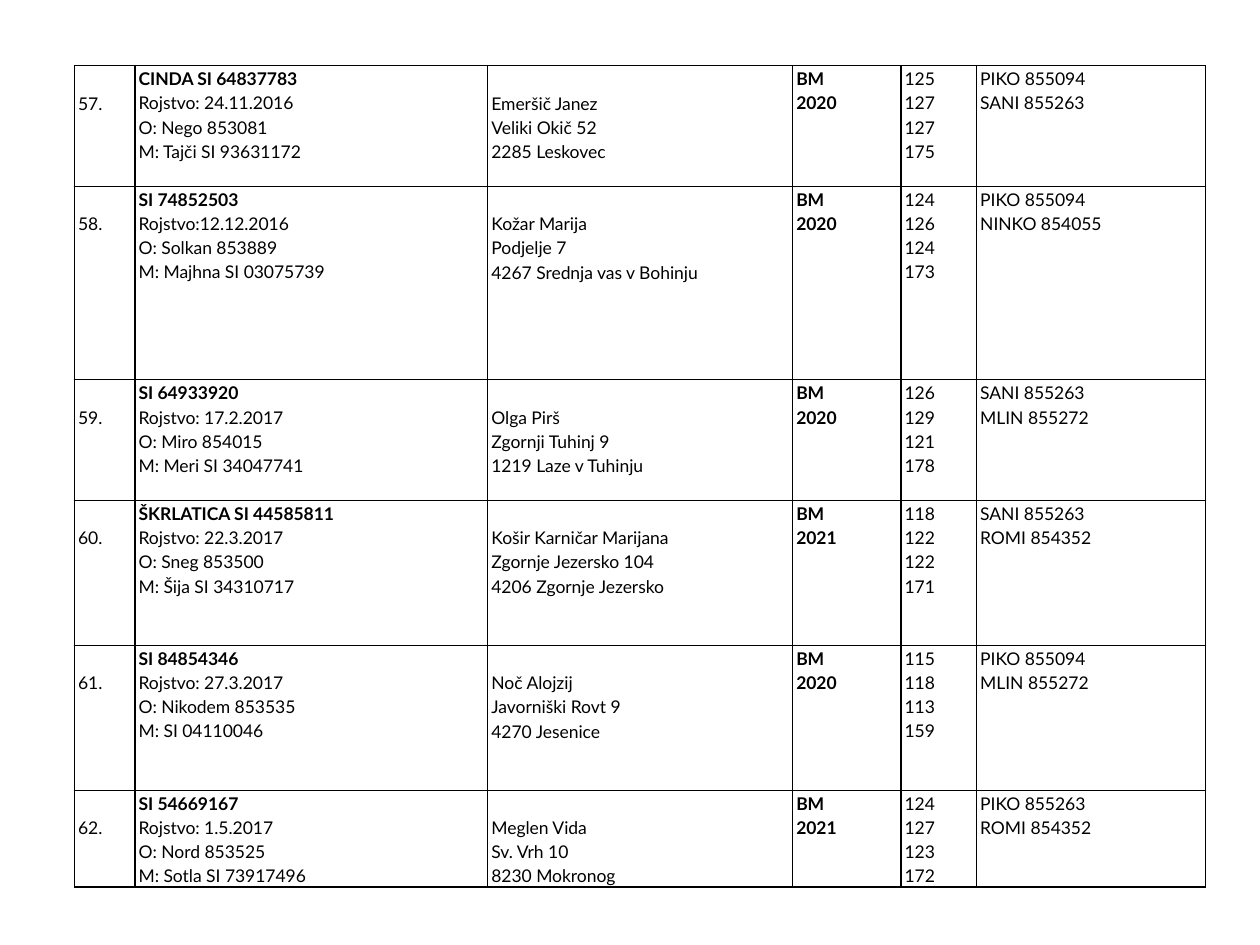
import pptx
import pptx.dml.color
import pptx.enum.text
import pptx.oxml.ns
import pptx.util
from lxml import etree

Inches = pptx.util.Inches
RGBColor = pptx.dml.color.RGBColor
BLACK = RGBColor(0x00, 0x00, 0x00)
WHITE = RGBColor(0xFF, 0xFF, 0xFF)

LINE_HEIGHT = 6.52 / 34
COL_WIDTHS = [0.48, 2.8, 2.42, 0.86, 0.6, 1.82]
NUMBER, ANIMAL, BREEDER, GRADE = range(4)
TABLE_FORMAT = {"first_row": False, "horz_banding": False}
CELL_FORMAT = {"margin_left": Inches(0.03), "margin_right": Inches(0.03), "margin_bottom": 0}
PARAGRAPH_FORMAT = {"alignment": pptx.enum.text.PP_ALIGN.JUSTIFY, "line_spacing": 1.15}
FONT_FORMAT = {"name": "Lato", "size": pptx.util.Pt(10)}

ROWS = [
    (5, ["57."],
     ["CINDA SI 64837783", "Rojstvo: 24.11.2016", "O: Nego 853081", "M: Tajči SI 93631172"],
     ["Emeršič Janez", "Veliki Okič 52", "2285 Leskovec"],
     ["BM", "2020"], ["125", "127", "127", "175"], ["PIKO 855094", "SANI 855263"]),
    (8, ["58."],
     ["SI 74852503", "Rojstvo:12.12.2016", "O: Solkan 853889", "M: Majhna SI 03075739"],
     ["Kožar Marija", "Podjelje 7", "4267 Srednja vas v Bohinju"],
     ["BM", "2020"], ["124", "126", "124", "173"], ["PIKO 855094", "NINKO 854055"]),
    (5, ["59."],
     ["SI 64933920", "Rojstvo: 17.2.2017", "O: Miro 854015", "M: Meri SI 34047741"],
     ["Olga Pirš", "Zgornji Tuhinj 9", "1219 Laze v Tuhinju"],
     ["BM", "2020"], ["126", "129", "121", "178"], ["SANI 855263", "MLIN 855272"]),
    (6, ["60."],
     ["ŠKRLATICA SI 44585811", "Rojstvo: 22.3.2017", "O: Sneg 853500", "M: Šija SI 34310717"],
     ["Košir Karničar Marijana", "Zgornje Jezersko 104", "4206 Zgornje Jezersko"],
     ["BM", "2021"], ["118", "122", "122", "171"], ["SANI 855263", "ROMI 854352"]),
    (6, ["61."],
     ["SI 84854346", "Rojstvo: 27.3.2017", "O: Nikodem 853535", "M: SI 04110046"],
     ["Noč Alojzij", "Javorniški Rovt 9", "4270 Jesenice"],
     ["BM", "2020"], ["115", "118", "113", "159"], ["PIKO 855094", "MLIN 855272"]),
    (4, ["62."],
     ["SI 54669167", "Rojstvo: 1.5.2017", "O: Nord 853525", "M: Sotla SI 73917496"],
     ["Meglen Vida", "Sv. Vrh 10", "8230 Mokronog"],
     ["BM", "2021"], ["124", "127", "123", "172"], ["PIKO 855263", "ROMI 854352"]),
]


def apply_format(target, values):
    for name, value in values.items():
        setattr(target, name, value)


def add_borders(cell):
    tc_pr = cell._tc.get_or_add_tcPr()
    for side in ("a:lnL", "a:lnR", "a:lnT", "a:lnB"):
        ln = etree.SubElement(tc_pr, pptx.oxml.ns.qn(side), w=str(pptx.util.Pt(1)))
        fill = etree.SubElement(ln, pptx.oxml.ns.qn("a:solidFill"))
        etree.SubElement(fill, pptx.oxml.ns.qn("a:srgbClr"), val=str(BLACK))


prs = pptx.Presentation()
prs.slide_width = Inches(10)
prs.slide_height = Inches(7.5)
s = prs.slides.add_slide(prs.slide_layouts[6])

table = s.shapes.add_table(
    len(ROWS), len(COL_WIDTHS), Inches(0.59), Inches(0.52), Inches(8.98), Inches(6.52)
).table
apply_format(table, TABLE_FORMAT)
for column, width in zip(table.columns, COL_WIDTHS):
    column.width = Inches(width)

for row, (line_count, *texts) in zip(table.rows, ROWS):
    row.height = Inches(line_count * LINE_HEIGHT)
    for col, (cell, lines) in enumerate(zip(row.cells, texts)):
        apply_format(cell, CELL_FORMAT)
        cell.margin_top = Inches(LINE_HEIGHT if col in (NUMBER, BREEDER) else 0)
        add_borders(cell)
        cell.fill.solid()
        cell.fill.fore_color.rgb = WHITE
        tf = cell.text_frame
        for i, line in enumerate(lines):
            p = tf.add_paragraph() if i else tf.paragraphs[0]
            apply_format(p, PARAGRAPH_FORMAT)
            r = p.add_run()
            r.text = line
            apply_format(r.font, FONT_FORMAT)
            r.font.bold = col == GRADE or (col == ANIMAL and i == 0)
            r.font.color.rgb = BLACK

prs.save("out.pptx")
